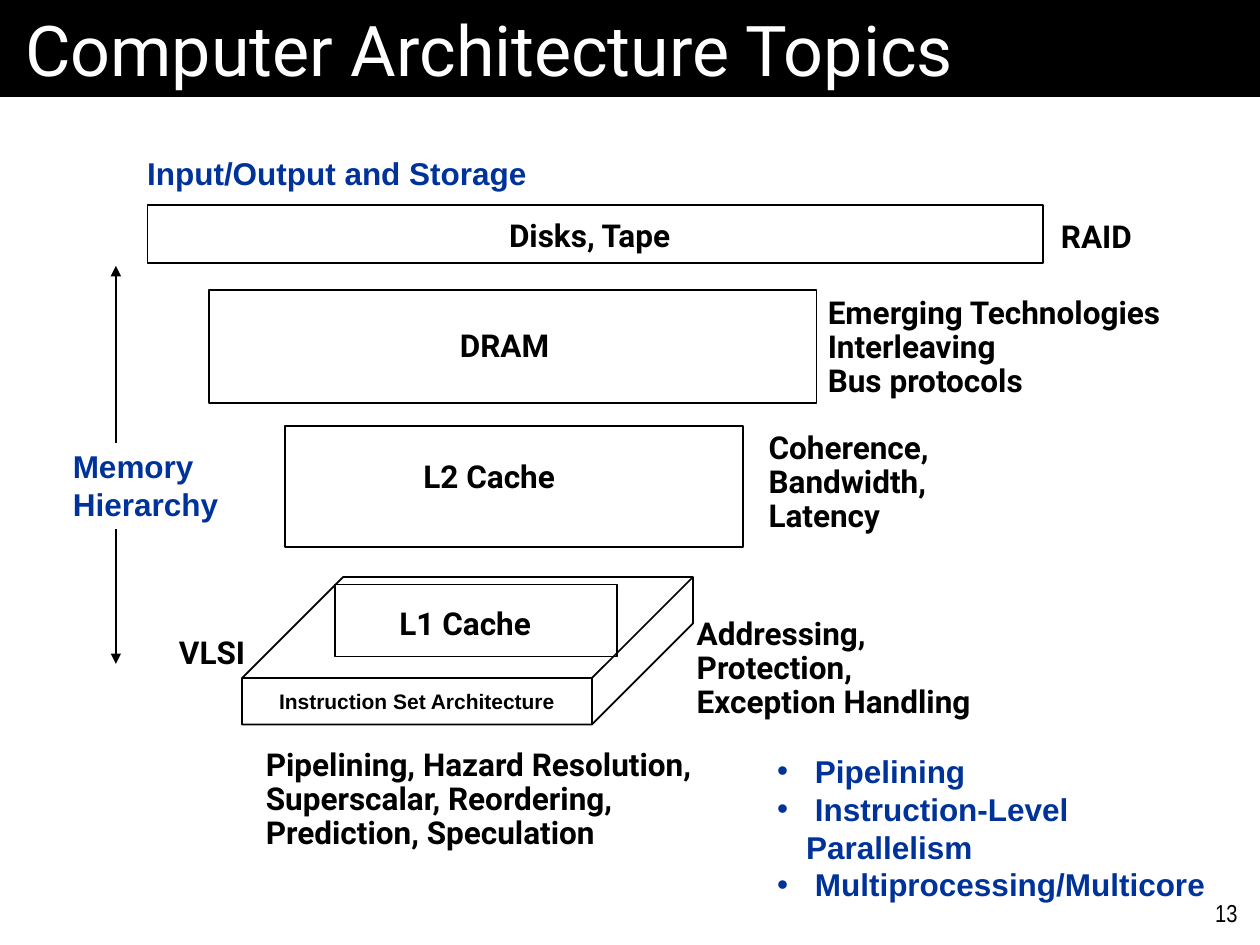
import pptx
import pptx.util
import pptx.dml.color
import pptx.enum.shapes
import pptx.enum.text
import pptx.oxml
import pptx.oxml.ns

Inches, Pt = pptx.util.Inches, pptx.util.Pt
SHAPE = pptx.enum.shapes.MSO_SHAPE
ALIGN = pptx.enum.text.PP_ALIGN
ANCHOR = pptx.enum.text.MSO_ANCHOR
AUTO_SIZE = pptx.enum.text.MSO_AUTO_SIZE

COLORS = {"ink": "000000", "paper": "FFFFFF", "heading": "003399"}

# Places are left, top, width, height in inches.
TITLE = "Computer Architecture Topics"
LEVEL_BOXES = [
    (2.66, 4.64, 2.24, 0.57),
    (2.26, 3.38, 3.64, 0.96),
    (1.66, 2.3, 4.82, 0.9),
    (1.17, 1.63, 7.11, 0.46),
]
LABELS = [
    ((3.1, 4.8, 1.25, 0.33), ["L1 Cache"]),
    ((3.29, 3.63, 1.25, 0.33), ["L2 Cache"]),
    ((3.58, 2.59, 0.89, 0.33), ["DRAM"]),
    ((3.97, 1.72, 1.53, 0.33), ["Disks, Tape"]),
    ((8.35, 1.73, 0.75, 0.33), ["RAID"]),
    ((6.5, 2.33, 2.97, 0.87), ["Emerging Technologies", "Interleaving", "Bus protocols"]),
    ((6.03, 3.4, 1.5, 0.87), ["Coherence,", "Bandwidth,", "Latency"]),
    ((5.46, 4.88, 2.47, 0.87), ["Addressing,", "Protection,", "Exception Handling"]),
    ((1.35, 5.03, 0.69, 0.33), ["VLSI"]),
    ((2.04, 5.92, 3.74, 0.87), ["Pipelining, Hazard Resolution,", "Superscalar, Reordering,",
                                "Prediction, Speculation"]),
]
HEADINGS = [
    ((1.07, 1.17, 3.3, 0.4), ["Input/Output and Storage"]),
    ((0.48, 3.5, 1.4, 0.7), ["Memory", "Hierarchy"]),
]
PARALLELISM = ((6.07, 5.92, 3.76, 1.0),
               [" Pipelining", " Instruction-Level Parallelism", " Multiprocessing/Multicore"])
INSTRUCTION_SET = ((1.92, 4.58, 3.58, 1.17), "Instruction Set Architecture")
PAGE_NUMBER = ((9.5, 7.08, 0.42, 0.33), ["13"])
ARROW_X = 0.92
ARROW_SPANS = [(3.52, 2.11), (4.2, 5.27)]


def rgb(name):
    return pptx.dml.color.RGBColor.from_string(COLORS[name])


def place(place_in_inches):
    return [Inches(length) for length in place_in_inches]


def drawing_element(tag, attributes=""):
    namespace = pptx.oxml.ns.nsdecls("a")
    return pptx.oxml.parse_xml(f"<a:{tag} {namespace} {attributes}/>")


def write(paragraph, text, font, size, color, bold=True):
    run = paragraph.add_run()
    run.text = text
    run.font.name = font
    run.font.size = Pt(size)
    run.font.bold = bold
    run.font.color.rgb = rgb(color)


def set_margins(frame, side, end):
    frame.margin_left = frame.margin_right = Inches(side)
    frame.margin_top = frame.margin_bottom = Inches(end)


def add_text(slide, where, lines, font, size=18, color="ink", bold=True,
             margins=(0.1, 0.05), spacing=None, align=ALIGN.LEFT, wrap=False):
    frame = slide.shapes.add_textbox(*place(where)).text_frame
    frame.word_wrap = wrap
    set_margins(frame, *margins)
    for index, line in enumerate(lines):
        paragraph = frame.add_paragraph() if index else frame.paragraphs[0]
        paragraph.alignment = align
        paragraph.line_spacing = spacing
        write(paragraph, line, font, size, color, bold)
    return frame


def add_outline(slide, preset, where):
    shape = slide.shapes.add_shape(preset, *place(where))
    shape.shadow.inherit = False
    shape.fill.background()
    shape.line.color.rgb = rgb("ink")
    shape.line.width = Pt(1)
    return shape


def add_arrow(slide, start, end):
    arrow = slide.shapes.add_connector(
        pptx.enum.shapes.MSO_CONNECTOR.STRAIGHT,
        *place((ARROW_X, start, ARROW_X, end)))
    arrow.line.color.rgb = rgb("ink")
    arrow.line.width = Pt(1)
    arrow.line._get_or_add_ln().append(drawing_element("tailEnd", 'type="triangle"'))
    arrow._element.spPr.append(drawing_element("effectLst"))


def add_bullet(paragraph, indent=0.23):
    properties = paragraph._p.get_or_add_pPr()
    properties.set("marL", str(Inches(indent)))
    properties.set("indent", str(-Inches(indent)))
    properties.append(drawing_element("buFont", 'typeface="Arial"'))
    properties.append(drawing_element("buChar", 'char="•"'))


def add_title(slide):
    title = slide.shapes.title
    title.left, title.top, title.width, title.height = place((0, 0, 10, 0.77))
    title.fill.solid()
    title.fill.fore_color.rgb = rgb("ink")
    frame = title.text_frame
    frame.auto_size = AUTO_SIZE.NONE
    frame.vertical_anchor = ANCHOR.MIDDLE
    set_margins(frame, 0.2, 0.05)
    frame.paragraphs[0].alignment = ALIGN.LEFT
    write(frame.paragraphs[0], TITLE, "Roboto", 40, "paper", bold=False)


def main():
    deck = pptx.Presentation()
    deck.slide_width, deck.slide_height = Inches(10), Inches(7.5)
    slide = deck.slides.add_slide(deck.slide_layouts[5])
    add_title(slide)

    for where in LEVEL_BOXES:
        add_outline(slide, SHAPE.RECTANGLE, where)
    for where, lines in LABELS:
        add_text(slide, where, lines, "Roboto", margins=(0.07, 0.03), spacing=0.9)
    for where, lines in HEADINGS:
        add_text(slide, where, lines, "Arial", color="heading")
    for start, end in ARROW_SPANS:
        add_arrow(slide, start, end)

    topics = add_text(slide, *PARALLELISM, "Arial", color="heading", wrap=True)
    for paragraph in topics.paragraphs:
        add_bullet(paragraph)

    where, text = INSTRUCTION_SET
    cube = add_outline(slide, SHAPE.CUBE, where)
    cube.adjustments[0] = 0.686
    cube.text_frame.word_wrap = False
    cube.text_frame.vertical_anchor = ANCHOR.MIDDLE
    cube.text_frame.paragraphs[0].alignment = ALIGN.CENTER
    write(cube.text_frame.paragraphs[0], text, "Arial", 12, "ink")

    add_text(slide, *PAGE_NUMBER, "Arial Narrow", size=14, bold=False,
             align=ALIGN.RIGHT, wrap=True)
    deck.save("out.pptx")


if __name__ == "__main__":
    main()
